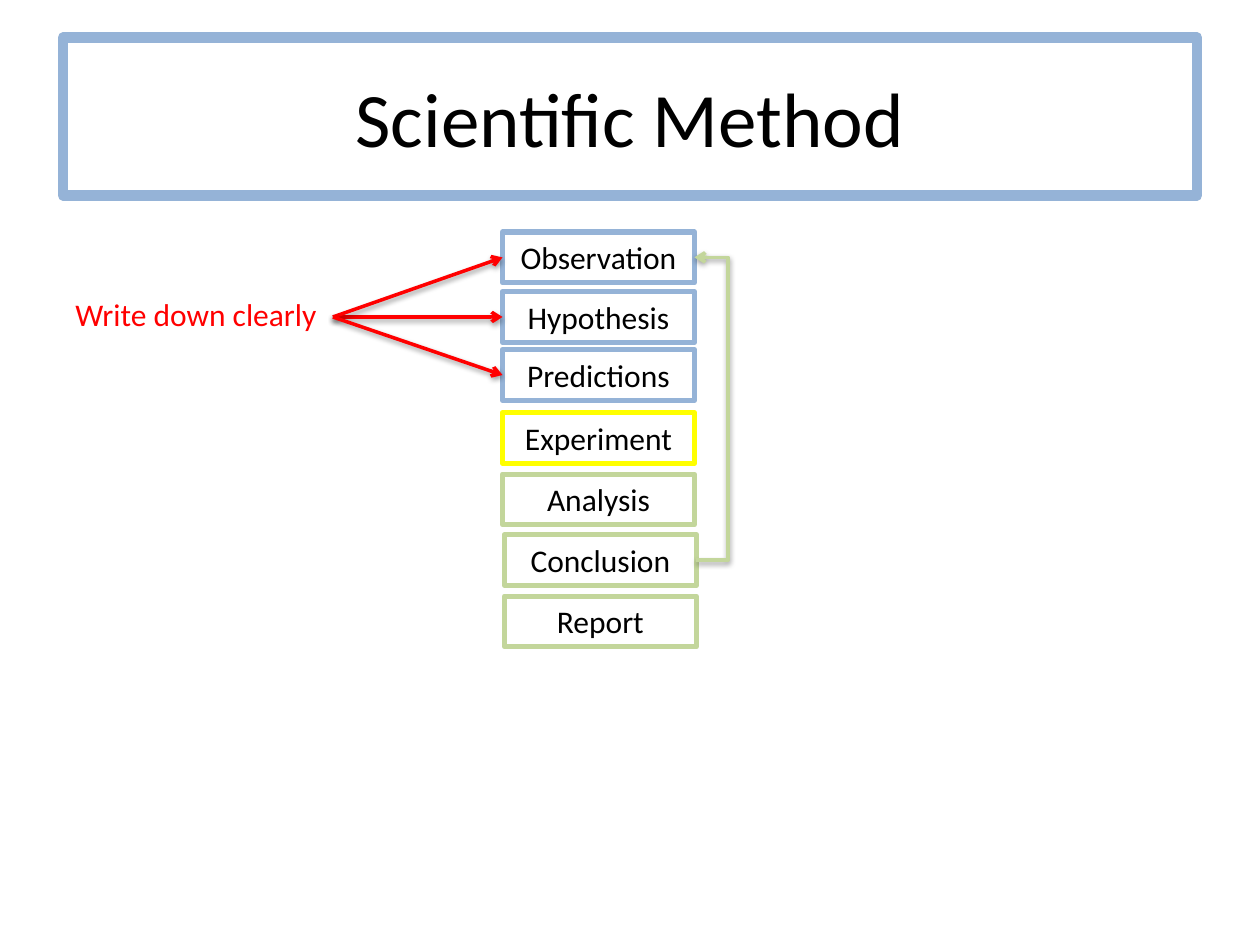
from lxml.etree import SubElement as Sub
from pptx import Presentation
from pptx.dml.color import RGBColor as RGB
from pptx.enum.shapes import MSO_CONNECTOR as Link
from pptx.enum.text import MSO_ANCHOR as Anchor, MSO_AUTO_SIZE as Fit, PP_ALIGN as Align
from pptx.oxml.ns import qn
from pptx.util import Cm, Pt

BLUE, GREEN, YELLOW, RED, BLACK = "95B3D7", "C3D69B", "FFFF00", "FF0000", "000000"
STEPS = [
    ("Observation", BLUE, 0, 0),
    ("Hypothesis", BLUE, 0, 1.2),
    ("Predictions", BLUE, 0, 2.37),
    ("Experiment", YELLOW, 0, 3.64),
    ("Analysis", GREEN, 0, 4.88),
    ("Conclusion", GREEN, 0.04, 6.1),
    ("Report", GREEN, 0.04, 7.34),
]


def paint(part, color):
    """Give a font or line a solid colour from a hex string."""
    part.fill.solid()
    part.fill.fore_color.rgb = RGB.from_string(color)


def write(frame, text, size, color, align):
    """Put one styled paragraph into a text frame."""
    frame.text = text
    para = frame.paragraphs[0]
    para.alignment = align
    para.font.name, para.font.size = "Calibri", Pt(size)
    paint(para.font, color)


def edge(shape, color, width):
    """Outline a shape."""
    paint(shape.line, color)
    shape.line.width = Pt(width)


def add_text(slide, box, text, color, align, wrap):
    """Add a text box that grows with its text."""
    shape = slide.shapes.add_textbox(*map(Cm, box))
    frame = shape.text_frame
    write(frame, text, 18, color, align)
    frame.word_wrap = wrap
    frame.auto_size = Fit.SHAPE_TO_FIT_TEXT
    return shape


def add_arrow(slide, kind, start, end, color):
    """Draw a connector with an open arrowhead at its end."""
    arrow = slide.shapes.add_connector(kind, *start, *end)
    edge(arrow, color, 2)
    Sub(arrow.line._get_or_add_ln(), qn("a:tailEnd"), type="arrow")
    return arrow


def add_title(slide, box):
    """Place and frame the title."""
    title = slide.shapes.title
    title.left, title.top, title.width, title.height = map(Cm, box)
    write(title.text_frame, "Scientific Method", 44, BLACK, Align.CENTER)
    title.text_frame.vertical_anchor = Anchor.MIDDLE
    edge(title, BLUE, 6)


def add_steps(slide, box):
    """Stack the framed steps and return them by name."""
    left, top, width, height = box
    steps = {}
    for name, color, dx, dy in STEPS:
        place = left + dx, top + dy, width, height
        steps[name] = add_text(slide, place, name, BLACK, Align.CENTER, True)
        edge(steps[name], color, 3)
    return steps


def middle(shape):
    """Return the height of a shape's centre line."""
    return shape.top + shape.height // 2


def add_loop(slide, first, last, reach):
    """Lead an elbow arrow from the last step back to the first."""
    start = last.left + last.width, middle(last)
    end = first.left + first.width, middle(first)
    loop = add_arrow(slide, Link.ELBOW, start, end, GREEN)
    bend = round(-100000 * Cm(reach) / loop.width)
    guides = loop._element.spPr.find(qn("a:prstGeom")).get_or_add_avLst()
    Sub(guides, qn("a:gd"), name="adj1", fmla=f"val {bend}")


def add_note(slide, box, steps):
    """Place the note and fan its arrows out to the steps."""
    note = add_text(slide, box, "Write down clearly", RED, Align.LEFT, False)
    start = note.left + note.width, middle(steps["Hypothesis"])
    for name in ("Hypothesis", "Observation", "Predictions"):
        step = steps[name]
        add_arrow(slide, Link.STRAIGHT, start, (step.left, middle(step)), RED)


def main():
    """Build and save the slide."""
    deck = Presentation()
    deck.slide_width, deck.slide_height = Cm(25.4), Cm(19.05)
    slide = deck.slides.add_slide(deck.slide_layouts[5])
    add_title(slide, (1.27, 0.76, 22.86, 3.18))
    steps = add_steps(slide, (10.13, 4.68, 3.87, 1.02))
    add_loop(slide, steps["Observation"], steps["Conclusion"], 0.64)
    add_note(slide, (1.27, 5.82, 5.44, 1.02), steps)
    deck.save("out.pptx")


if __name__ == "__main__":
    main()
